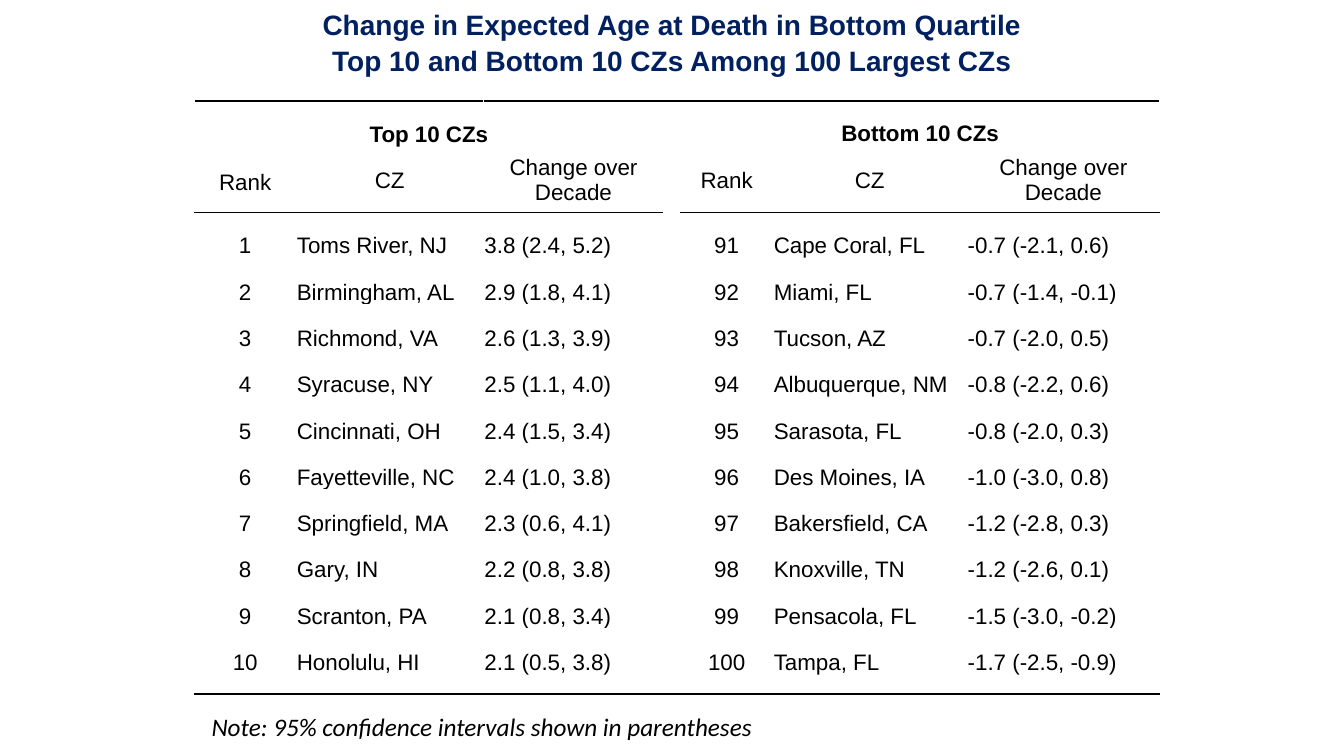
from dataclasses import dataclass

from lxml import etree
from pptx import Presentation, util as u
from pptx.dml import color
from pptx.enum import text
from pptx.oxml import ns


@dataclass(frozen=True)
class Theme:
    navy: str = "002060"
    black: str = "000000"
    white: str = "FFFFFF"
    font: str = "Arial"
    note_font: str = "Calibri"
    title_size: int = 20
    table_size: int = 16
    note_size: int = 18
    blank_size: int = 6


theme = Theme()
CENTER, LEFT = text.PP_ALIGN.CENTER, text.PP_ALIGN.LEFT
MIDDLE, BOTTOM = text.MSO_ANCHOR.MIDDLE, text.MSO_ANCHOR.BOTTOM


def write(frame, content, size=theme.table_size, font=theme.font, tint=theme.black,
          bold=False, italic=False, align=LEFT, line_spacing=1.0, space_before=0):
    """Fill a text frame, one paragraph for each line of content."""
    for index, line in enumerate(content.split("\n")):
        para = frame.add_paragraph() if index else frame.paragraphs[0]
        para.alignment = align
        para.line_spacing = line_spacing
        para.space_before = u.Pt(space_before)
        span = para.add_run()
        span.text = line
        span.font.size = u.Pt(size)
        span.font.name = font
        span.font.bold = bold
        span.font.italic = italic
        span.font.color.rgb = color.RGBColor.from_string(tint)


def add_borders(cell, **sides):
    """Draw the sides given as L, R, T or B = (colour, width in points)."""
    properties = cell._tc.get_or_add_tcPr()
    for side in "LRTB":
        if side in sides:
            tint, width = sides[side]
            line = etree.SubElement(properties, ns.qn(f"a:ln{side}"), w=str(u.Pt(width)))
            fill = etree.SubElement(line, ns.qn("a:solidFill"))
            etree.SubElement(fill, ns.qn("a:srgbClr"), val=tint)


deck = Presentation()
deck.slide_width, deck.slide_height = u.Pt(960), u.Pt(540)
page = deck.slides.add_slide(deck.slide_layouts[5])

title = page.shapes.title
title.left, title.top, title.width, title.height = u.Pt(84), u.Pt(0), u.Pt(792), u.Pt(60)
title.text_frame.auto_size = text.MSO_AUTO_SIZE.NONE
title.text_frame.vertical_anchor = MIDDLE
write(title.text_frame,
      "Change in Expected Age at Death in Bottom Quartile\n"
      "Top 10 and Bottom 10 CZs Among 100 Largest CZs",
      size=theme.title_size, tint=theme.navy, bold=True, align=CENTER, space_before=1.5)

note = page.shapes.add_textbox(u.Pt(144), u.Pt(504.7), u.Pt(409.7), u.Pt(29))
note.text_frame.word_wrap = False
note.text_frame.auto_size = text.MSO_AUTO_SIZE.SHAPE_TO_FIT_TEXT
write(note.text_frame, "Note: 95% confidence intervals shown in parentheses",
      size=theme.note_size, font=theme.note_font, italic=True)

top_zones = [
    ("Toms River, NJ", "3.8 (2.4, 5.2)"),
    ("Birmingham, AL", "2.9 (1.8, 4.1)"),
    ("Richmond, VA", "2.6 (1.3, 3.9)"),
    ("Syracuse, NY", "2.5 (1.1, 4.0)"),
    ("Cincinnati, OH", "2.4 (1.5, 3.4)"),
    ("Fayetteville, NC", "2.4 (1.0, 3.8)"),
    ("Springfield, MA", "2.3 (0.6, 4.1)"),
    ("Gary, IN", "2.2 (0.8, 3.8)"),
    ("Scranton, PA", "2.1 (0.8, 3.4)"),
    ("Honolulu, HI", "2.1 (0.5, 3.8)"),
]
bottom_zones = [
    ("Cape Coral, FL", "-0.7 (-2.1, 0.6)"),
    ("Miami, FL", "-0.7 (-1.4, -0.1)"),
    ("Tucson, AZ", "-0.7 (-2.0, 0.5)"),
    ("Albuquerque, NM", "-0.8 (-2.2, 0.6)"),
    ("Sarasota, FL", "-0.8 (-2.0, 0.3)"),
    ("Des Moines, IA", "-1.0 (-3.0, 0.8)"),
    ("Bakersfield, CA", "-1.2 (-2.8, 0.3)"),
    ("Knoxville, TN", "-1.2 (-2.6, 0.1)"),
    ("Pensacola, FL", "-1.5 (-3.0, -0.2)"),
    ("Tampa, FL", "-1.7 (-2.5, -0.9)"),
]
headings = ["Rank", "CZ", "Change over Decade"]
blank = [""] * 7
rows = [blank, ["Top 10 CZs", "", "", "", "Bottom 10 CZs", "", ""], headings + [""] + headings]
for rank, (top, bottom) in enumerate(zip(top_zones, bottom_zones), start=1):
    rows.append([str(rank), *top, "", str(rank + 90), *bottom])
rows.append(blank)

GROUP_ROW, HEADING_ROW, FIRST_ROW, LAST_ROW = 1, 2, 3, len(rows) - 1
GAP_COLUMN = 3
column_widths = [72.5, 134, 128.5, 12.2, 66, 138.5, 138]
row_heights = [12.2, 21.2, 45.3] + [33.1] * 10 + [13.3]

table = page.shapes.add_table(len(rows), len(column_widths), u.Pt(138.9), u.Pt(72),
                              u.Pt(sum(column_widths)), u.Pt(sum(row_heights))).table
table.first_row = table.horz_banding = False
for column, width in zip(table.columns, column_widths):
    column.width = u.Pt(width)
for row, height in zip(table.rows, row_heights):
    row.height = u.Pt(height)
for row, first, last in [(0, 0, 1), (0, 2, 6), (GROUP_ROW, 0, 2), (GROUP_ROW, 4, 6)]:
    table.cell(row, first).merge(table.cell(row, last))

thin, thick, clear = (theme.black, 1), (theme.black, 1.5), (theme.white, 1)
for r, values in enumerate(rows):
    for c, value in enumerate(values):
        cell = table.cell(r, c)
        if r == 0:
            add_borders(cell, L=clear, R=clear, T=thick)
        elif r == LAST_ROW:
            add_borders(cell, B=thick)
        elif r == HEADING_ROW and c != GAP_COLUMN:
            add_borders(cell, B=thin)
        elif r == FIRST_ROW and c != GAP_COLUMN:
            add_borders(cell, T=thin)
        cell.fill.solid()
        cell.fill.fore_color.rgb = color.RGBColor.from_string(theme.white)

        in_header = r < FIRST_ROW
        cell.margin_left = cell.margin_right = u.Pt(4.3 if in_header else 0.7)
        cell.margin_top = u.Pt(0 if in_header else 0.7)
        cell.margin_bottom = u.Pt(0)
        cell.vertical_anchor = MIDDLE if in_header else BOTTOM
        if value:
            write(cell.text_frame, value, bold=r == GROUP_ROW,
                  align=CENTER if in_header or c in (0, 4) else LEFT,
                  line_spacing=1.15 if in_header and c == 0 else 1.0)
        else:
            etree.SubElement(cell.text_frame.paragraphs[0]._p, ns.qn("a:endParaRPr"),
                             sz=str(theme.blank_size * 100))

deck.save("out.pptx")
